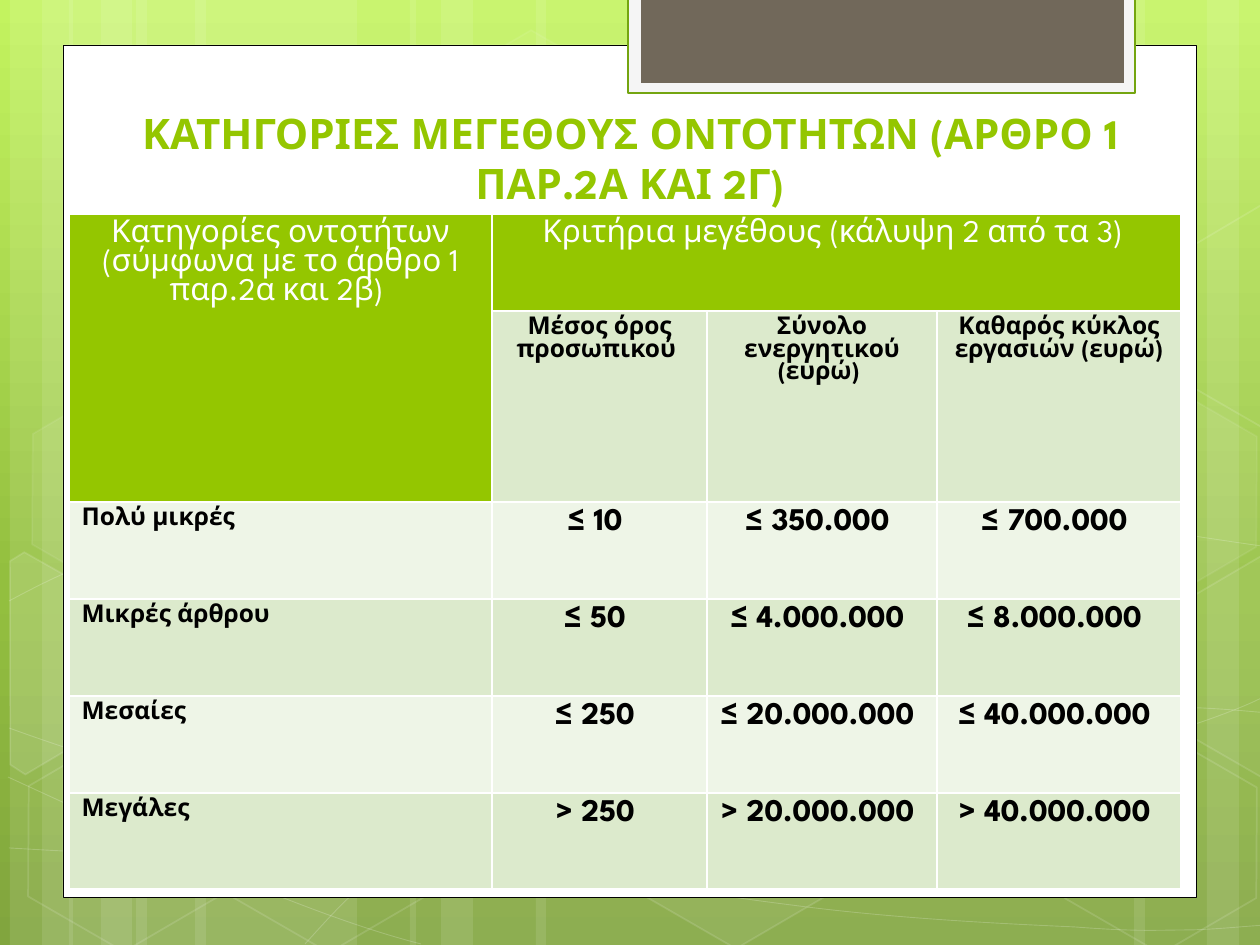
"""Build the slide on entity size categories and their criteria."""
from math import cos, radians, sin

from lxml import etree
from pptx import Presentation
from pptx.dml.color import RGBColor
from pptx.enum.shapes import MSO_SHAPE
from pptx.enum.text import MSO_ANCHOR, PP_ALIGN
from pptx.oxml.ns import qn
from pptx.util import Emu, Pt

PX = 914400 / 126
RECTANGLE, HEXAGON = MSO_SHAPE.RECTANGLE, MSO_SHAPE.HEXAGON
LEFT, CENTER = PP_ALIGN.LEFT, PP_ALIGN.CENTER
TOP, BOTTOM = MSO_ANCHOR.TOP, MSO_ANCHOR.BOTTOM
FONT = "League Spartan"
TILT = 30
COLORS = {
    "white": "FFFFFF", "black": "000000", "accent": "94C600",
    "band_dark": "DCEACC", "band_light": "EEF5E7",
    "tab_frame": "F5F5F5", "tab_line": "74A510", "tab": "71685A",
}
BACKGROUND = [(0, "C3F35F"), (62, "93BF3F"), (100, "81A53E")]

TITLE = "ΚΑΤΗΓΟΡΙΕΣ ΜΕΓΕΘΟΥΣ ΟΝΤΟΤΗΤΩΝ (ΑΡΘΡΟ 1 ΠΑΡ.2Α ΚΑΙ 2Γ)"
ROWS = [
    ("Κατηγορίες οντοτήτων (σύμφωνα με το άρθρο 1 παρ.2α και 2β) ",
     "Κριτήρια μεγέθους (κάλυψη 2 από τα 3) ", "", ""),
    ("", "Μέσος όρος προσωπικού ", "Σύνολο ενεργητικού (ευρώ) ",
     "Καθαρός κύκλος εργασιών (ευρώ)"),
    ("Πολύ μικρές", "≤ 10 ", "≤ 350.000 ", "≤ 700.000 "),
    ("Μικρές άρθρου", "≤ 50 ", "≤ 4.000.000 ", "≤ 8.000.000 "),
    ("Μεσαίες", "≤ 250 ", "≤ 20.000.000 ", "≤ 40.000.000 "),
    ("Μεγάλες", "> 250 ", "> 20.000.000 ", "> 40.000.000 "),
]
COLUMN_WIDTHS = [423, 215, 230, 244]
ROW_HEIGHTS = [97, 191, 97, 97, 97, 96]

STRIPES = [(136, 221), (10, 63), (42, 105), (195, 221), (69, 63), (101, 105),
           (924, 221), (1207, 63), (1134, 105), (536, 388), (410, 63), (441, 105)]
CURVES = [
    [(9, 848), (77, 852), (145, 856), (239, 854), (334, 853), (451, 851), (577, 838),
     (703, 825), (882, 801), (998, 777), (1113, 753), (1231, 716), (1269, 694)],
    [(9, 601), (45, 582), (82, 562), (152, 543), (224, 524), (326, 496), (437, 488),
     (549, 479), (685, 478), (824, 488), (963, 498), (1193, 537), (1269, 547)],
    [(8, 777), (160, 847), (311, 916), (421, 944)],
    [(9, 728), (48, 742), (88, 756), (161, 776), (234, 795), (344, 827), (450, 848),
     (554, 869), (687, 892), (791, 905), (896, 919), (1008, 924), (1075, 927),
     (1140, 932), (1158, 930), (1191, 930), (1223, 929), (1246, 926), (1269, 925)],
    [(305, 944), (328, 919), (350, 893), (381, 871), (411, 848), (454, 823), (489, 805),
     (524, 788), (546, 780), (592, 767), (638, 755), (722, 737), (766, 728),
     (811, 720), (818, 717), (857, 717), (896, 713), (958, 709), (1000, 708),
     (1045, 707), (1116, 708), (1116, 708), (1144, 708), (1173, 708), (1201, 708),
     (1223, 709), (1245, 711), (1256, 712), (1267, 713), (1264, 712), (1268, 713)],
]
HEXAGONS = [(421, 45, 4, 8), (626, 742, 6, 12), (14, 745, 0, 12), (18, 393, 7, 8),
            (219, 746, 0, 12), (949, 571, 10, 12), (1051, 747, 0, 12), (1051, 396, 7, 8)]
CUT_HEXAGONS = [
    ((45, 674), [(10, 561), (24, 552), (121, 607), (120, 718), (25, 774), (10, 765)], 10),
    ((1241, 655), [(1167, 611), (1261, 556), (1271, 562), (1271, 772), (1263, 777),
                   (1167, 722)], 4),
    ((1241, 304), [(1167, 261), (1261, 205), (1273, 212), (1271, 422), (1263, 427),
                   (1167, 372)], 0),
]


def px(value):
    return Emu(round(value * PX))


def paint(fill, color, alpha=100):
    fill.solid()
    fill.fore_color.rgb = RGBColor.from_string(color)
    if alpha < 100:
        node = fill._xPr.find(".//" + qn("a:srgbClr"))
        etree.SubElement(node, qn("a:alpha"), val=str(alpha * 1000))


def style(shape, fill=None, alpha=100, line=None, width=1, line_alpha=100):
    shape.shadow.inherit = False
    if fill and alpha:
        paint(shape.fill, fill, alpha)
    else:
        shape.fill.background()
    if line:
        paint(shape.line.fill, line, line_alpha)
        shape.line.width = Pt(width)
    else:
        shape.line.fill.background()


def add_shape(slide, kind, box, **look):
    shape = slide.shapes.add_shape(kind, *map(px, box))
    style(shape, **look)
    return shape


def add_outline(slide, points, close, **look):
    builder = slide.shapes.build_freeform(*points[0], scale=PX)
    builder.add_line_segments(points[1:], close=close)
    shape = builder.convert_to_shape()
    style(shape, **look)
    return shape


def bend(shape):
    outline = shape._element.find(".//" + qn("a:path"))
    segments = outline.findall(qn("a:lnTo"))
    for start in range(0, len(segments), 3):
        curve = etree.SubElement(outline, qn("a:cubicBezTo"))
        for segment in segments[start:start + 3]:
            curve.append(segment[0])
            outline.remove(segment)


def untilt(point, center):
    x, y = point[0] - center[0], point[1] - center[1]
    c, s = cos(radians(TILT)), sin(radians(TILT))
    return center[0] + x * c + y * s, center[1] - x * s + y * c


def write(frame, text, size=18, color="black", bold=False, align=CENTER, anchor=TOP):
    frame.word_wrap = True
    frame.vertical_anchor = anchor
    paragraph = frame.paragraphs[0]
    paragraph.alignment = align
    run = paragraph.add_run()
    run.text = text
    run.font.name = FONT
    run.font.size = Pt(size)
    run.font.bold = bold
    run.font.color.rgb = RGBColor.from_string(COLORS[color])


def set_borders(cell):
    properties = cell._tc.get_or_add_tcPr()
    for index, tag in enumerate(("a:lnL", "a:lnR", "a:lnT", "a:lnB")):
        line = etree.Element(qn(tag), w=str(Pt(1)))
        solid = etree.SubElement(line, qn("a:solidFill"))
        etree.SubElement(solid, qn("a:srgbClr"), val=COLORS["white"])
        properties.insert(index, line)


def add_background(slide):
    fill = slide.background.fill
    fill.gradient()
    fill.gradient_angle = 270
    stops = slide._element.find(".//" + qn("a:gsLst"))
    for stop in list(stops):
        stops.remove(stop)
    for position, color in BACKGROUND:
        stop = etree.SubElement(stops, qn("a:gs"), pos=str(position * 1000))
        etree.SubElement(stop, qn("a:srgbClr"), val=color)
    white = COLORS["white"]
    for left, width in STRIPES:
        add_shape(slide, RECTANGLE, (left, 0, width, 945), fill=white, alpha=10)
    for points in CURVES:
        bend(add_outline(slide, points, False, line=white, width=0.5, line_alpha=20))
    for left, top, alpha, line_alpha in HEXAGONS:
        hexagon = add_shape(slide, HEXAGON, (left, top, 220, 192), fill=white,
                            alpha=alpha, line=white, line_alpha=line_alpha)
        hexagon.adjustments[0] = 0.285
        hexagon.rotation = TILT
    for center, points, alpha in CUT_HEXAGONS:
        upright = [untilt(point, center) for point in points]
        hexagon = add_outline(slide, upright, True, fill=white, alpha=alpha,
                              line=white, line_alpha=12)
        hexagon.rotation = TILT


def add_categories(slide):
    box = (69, 214, sum(COLUMN_WIDTHS), sum(ROW_HEIGHTS))
    table = slide.shapes.add_table(len(ROWS), len(COLUMN_WIDTHS), *map(px, box)).table
    for column, width in zip(table.columns, COLUMN_WIDTHS):
        column.width = px(width)
    for r, (row, height) in enumerate(zip(ROWS, ROW_HEIGHTS)):
        table.rows[r].height = px(height)
        for c, text in enumerate(row):
            cell = table.cell(r, c)
            header = r == 0 or (r == 1 and c == 0)
            label = r > 1 and c == 0
            band = "accent" if header else ("band_dark" if r % 2 else "band_light")
            paint(cell.fill, COLORS[band])
            set_borders(cell)
            if text:
                write(cell.text_frame, text, bold=not header,
                      size=14 if r == 1 or label else 18,
                      color="white" if header else "black",
                      align=LEFT if label else CENTER)
    table.cell(0, 0).merge(table.cell(1, 0))
    table.cell(0, 1).merge(table.cell(0, 3))


def main():
    presentation = Presentation()
    presentation.slide_width, presentation.slide_height = px(1260), px(945)
    slide = presentation.slides.add_slide(presentation.slide_layouts[6])
    add_background(slide)
    add_shape(slide, RECTANGLE, (63, 45, 1134, 853), fill=COLORS["white"],
              line=COLORS["black"], width=0.5)
    add_shape(slide, RECTANGLE, (628, -3, 507, 96), fill=COLORS["tab_frame"],
              line=COLORS["tab_line"], width=1.25)
    add_shape(slide, RECTANGLE, (641, -3, 483, 86), fill=COLORS["tab"])
    title = slide.shapes.add_textbox(*map(px, (64, 96, 1132, 118)))
    write(title.text_frame, TITLE, size=24, color="accent", bold=True, anchor=BOTTOM)
    add_categories(slide)
    presentation.save("out.pptx")


if __name__ == "__main__":
    main()
